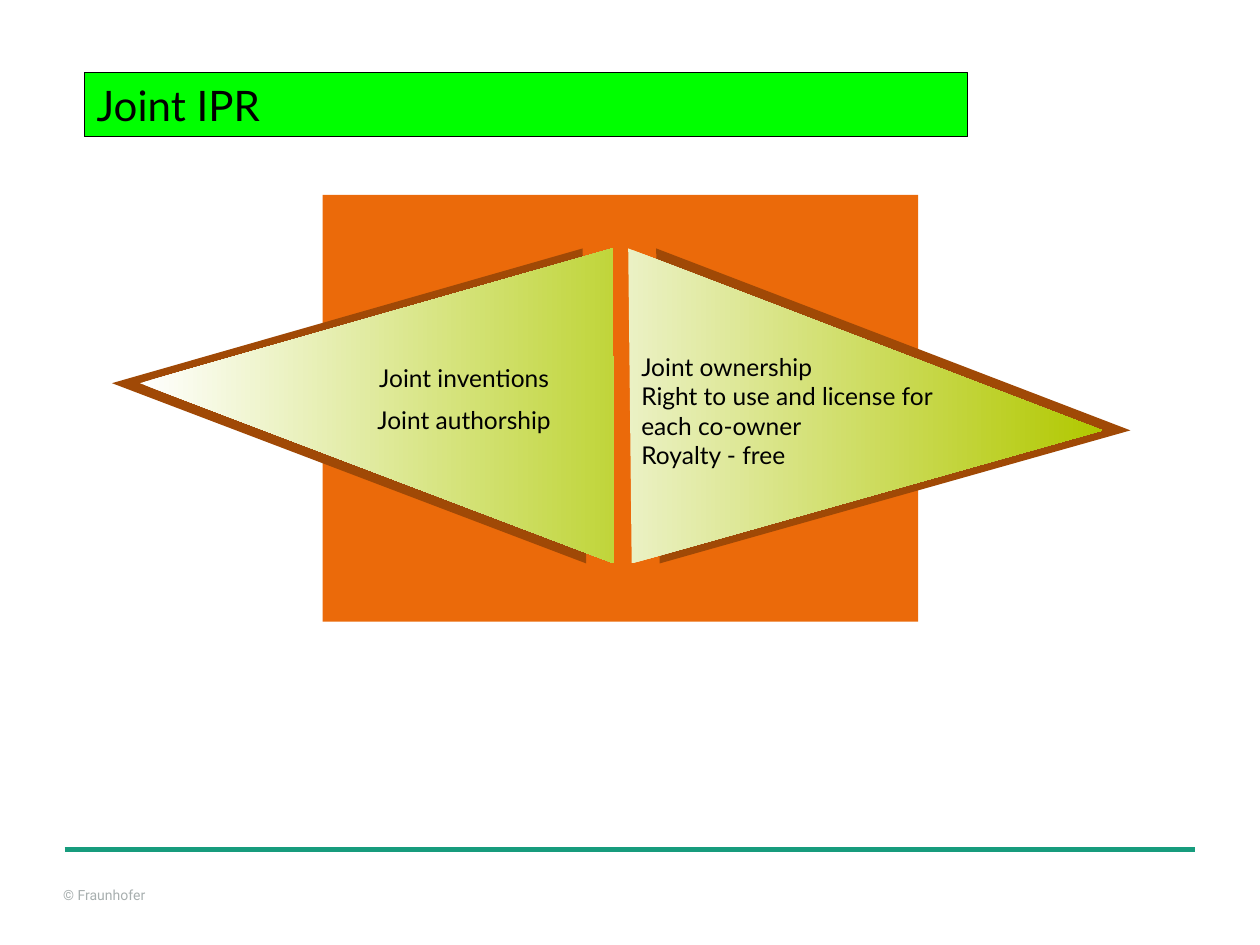
from lxml import etree
from pptx import Presentation
from pptx.dml.color import RGBColor
from pptx.enum.shapes import MSO_CONNECTOR, MSO_SHAPE
from pptx.enum.text import PP_ALIGN
from pptx.oxml.ns import qn
from pptx.util import Pt

RECTANGLE = MSO_SHAPE.RECTANGLE
STRAIGHT = MSO_CONNECTOR.STRAIGHT
LEFT, CENTER = PP_ALIGN.LEFT, PP_ALIGN.CENTER

# Content: each text box has paragraphs; \v is a line break
TITLE = ["Joint IPR"]
COPYRIGHT = ["© Fraunhofer"]
SUBJECTS = ["Joint inventions", "Joint authorship"]
RIGHTS = ["Joint ownership\vRight to use and license for each co-owner\vRoyalty - free"]

# Lengths in points; a shade is the same triangle moved sideways
SHADE_SHIFT = 16.5
ARROWS = [
    {"corners": [(349.5, 142.5), (80.5, 219), (351.3, 322.5)],
     "shift": -SHADE_SHIFT, "colours": ("FFFFFF", "C0D53A")},
    {"corners": [(360.7, 322.5), (630, 246.3), (358.7, 142.5)],
     "shift": SHADE_SHIFT, "colours": ("EBF1C4", "B1C800")},
]


def colour(code):
    return RGBColor.from_string(code)


def write(shape, paragraphs, size, font, code="000000", align=LEFT, insets=(6.5, 3)):
    frame = shape.text_frame
    frame.word_wrap = True
    frame.margin_left = frame.margin_right = Pt(insets[0])
    frame.margin_top = frame.margin_bottom = Pt(insets[1])
    frame.text = "\n".join(paragraphs)
    for index, paragraph in enumerate(frame.paragraphs):
        paragraph.alignment = align
        paragraph.space_before = Pt(size / 2 if index else 0)
        for run in paragraph.runs:
            run.font.size = Pt(size)
            run.font.name = font
            run.font.color.rgb = colour(code)


def add_text(shapes, box, *args, **kwargs):
    write(shapes.add_textbox(*map(Pt, box)), *args, **kwargs)


def add_box(shapes, box, fill):
    shape = shapes.add_shape(RECTANGLE, *map(Pt, box))
    shape.shadow.inherit = False
    shape.fill.solid()
    shape.fill.fore_color.rgb = colour(fill)
    shape.line.fill.background()
    return shape


def add_triangle(shapes, corners, shift=0):
    points = [(x + shift, y) for x, y in corners]
    builder = shapes.build_freeform(*points[0], scale=Pt(1))
    builder.add_line_segments(points[1:], close=True)
    triangle = builder.convert_to_shape()
    triangle.shadow.inherit = False
    triangle.line.fill.background()
    return triangle


def main():
    deck = Presentation()
    deck.slide_width, deck.slide_height = Pt(720), Pt(540)
    shapes = deck.slides.add_slide(deck.slide_layouts[6]).shapes

    # Footer
    add_text(shapes, (36, 506.5, 70.5, 9.5), COPYRIGHT, 8, "Roboto", "A8AFAF",
             insets=(0, 0))
    rule = shapes.add_connector(STRAIGHT, Pt(37), Pt(485.5), Pt(683), Pt(485.5))
    rule.line.color.rgb = colour("179C7D")
    rule.line.width = Pt(2.5)
    etree.SubElement(rule._element.spPr, qn("a:effectLst"))

    # Backdrop and the two shaded arrows
    add_box(shapes, (184.3, 111.4, 340.4, 243.8), "EB6A0A")
    for arrow in ARROWS:
        shade = add_triangle(shapes, arrow["corners"], arrow["shift"])
        shade.fill.solid()
        shade.fill.fore_color.rgb = colour("A04906")
        face = add_triangle(shapes, arrow["corners"])
        face.fill.gradient()
        face.fill.gradient_angle = 0
        for stop, code in zip(face.fill.gradient_stops, arrow["colours"]):
            stop.color.rgb = colour(code)

    # Arrow texts
    add_text(shapes, (190, 204.5, 150.5, 49), SUBJECTS, 14, "Lato", align=CENTER)
    add_text(shapes, (360, 198, 189.4, 74), RIGHTS, 14, "Lato")

    # Title bar
    bar = add_box(shapes, (48.2, 41.5, 504.7, 36.7), "00FF00")
    bar.line.color.rgb = colour("000000")
    bar.line.width = Pt(0.75)
    write(bar, TITLE, 24, "Lato", insets=(7.2, 3.6))

    deck.save("out.pptx")


if __name__ == "__main__":
    main()
